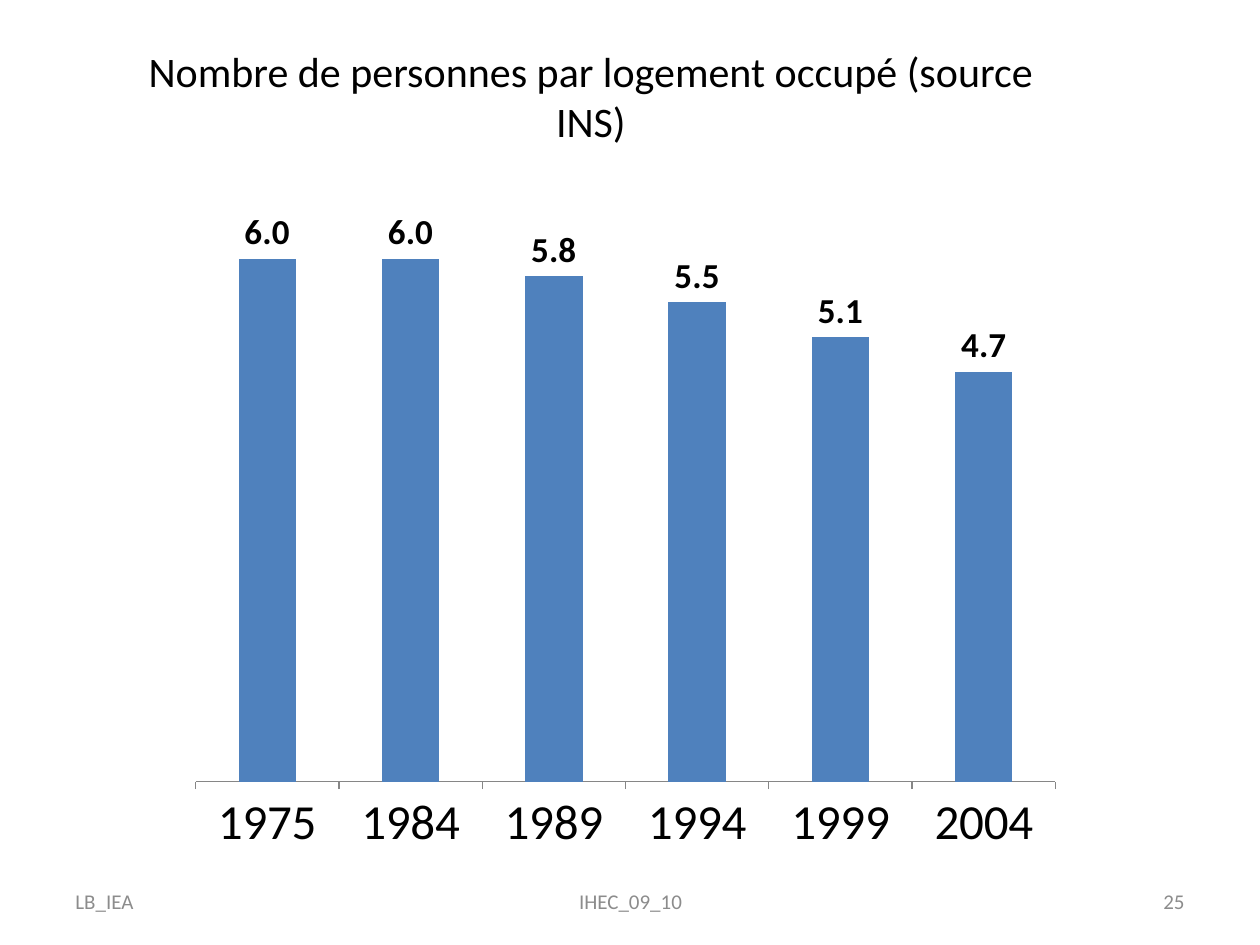
import pptx
import pptx.chart.data
import pptx.dml.color
import pptx.enum.chart
import pptx.enum.text
import pptx.oxml
import pptx.oxml.ns
import pptx.util

THEME = {
    "font": "Calibri",
    "ink": pptx.dml.color.RGBColor.from_string("000000"),
    "muted": pptx.dml.color.RGBColor.from_string("8C8C8C"),
    "bar": pptx.dml.color.RGBColor.from_string("4F81BD"),
    "axis": pptx.dml.color.RGBColor.from_string("868686"),
    "title": pptx.util.Pt(24),
    "footer": pptx.util.Pt(12),
    "years": pptx.util.Pt(28),
    "labels": pptx.util.Pt(20),
    "chart": pptx.util.Pt(10),
}
ALIGN = pptx.enum.text.PP_ALIGN
ANCHOR = pptx.enum.text.MSO_ANCHOR
TICK = pptx.enum.chart.XL_TICK_MARK

deck = pptx.Presentation()
deck.slide_width = pptx.util.Inches(10)
deck.slide_height = pptx.util.Inches(7.5)
page = deck.slides.add_slide(deck.slide_layouts[6])


def apply_format(target, values):
    for name, value in values.items():
        setattr(target, name, value)


def style_font(font, size, color, bold=False):
    apply_format(font, {"name": THEME["font"], "size": THEME[size], "bold": bold})
    font.color.rgb = THEME[color]


# Column chart: persons per occupied dwelling
persons = {"1975": 6.0, "1984": 6.0, "1989": 5.8, "1994": 5.5, "1999": 5.1, "2004": 4.7}
data = pptx.chart.data.CategoryChartData(number_format="0.0")
data.categories = list(persons)
data.add_series("Series 1", list(persons.values()))
chart_area = [pptx.util.Inches(length) for length in (1.41, 1.25, 7.11, 5.63)]
chart = page.shapes.add_chart(
    pptx.enum.chart.XL_CHART_TYPE.COLUMN_CLUSTERED, *chart_area, data).chart
apply_format(chart, {"has_legend": False, "has_title": False})
style_font(chart.font, "chart", "ink")

# Bars and their values
plot = chart.plots[0]
apply_format(plot, {"gap_width": 150, "vary_by_categories": False, "has_data_labels": True})
fill = plot.series[0].format.fill
fill.solid()
fill.fore_color.rgb = THEME["bar"]
apply_format(plot.data_labels, {
    "show_value": True, "number_format": "0.0", "number_format_is_linked": False,
    "position": pptx.enum.chart.XL_LABEL_POSITION.OUTSIDE_END})
style_font(plot.data_labels.font, "labels", "ink", bold=True)

# Axes
apply_format(chart.value_axis, {
    "visible": False, "has_major_gridlines": False,
    "minimum_scale": 0, "maximum_scale": 7})
year_axis = chart.category_axis
apply_format(year_axis, {"major_tick_mark": TICK.OUTSIDE, "minor_tick_mark": TICK.NONE})
style_font(year_axis.tick_labels.font, "years", "ink")
year_axis.format.line.color.rgb = THEME["axis"]
year_axis.format.line.width = pptx.util.Pt(0.75)

# Plot area as shares of the chart
plot_area = chart.element.find(".//" + pptx.oxml.ns.qn("c:plotArea"))
for old_layout in plot_area.findall(pptx.oxml.ns.qn("c:layout")):
    plot_area.remove(old_layout)
shares = {"x": 0.02, "y": 0.02, "w": 0.96, "h": 0.86}
plot_area.insert(0, pptx.oxml.parse_xml(
    f'<c:layout {pptx.oxml.ns.nsdecls("c")}><c:manualLayout>'
    '<c:layoutTarget val="inner"/><c:xMode val="edge"/><c:yMode val="edge"/>'
    + "".join(f'<c:{side} val="{share}"/>' for side, share in shares.items())
    + "</c:manualLayout></c:layout>"))

# Title and footer line
footer_top, footer_height = 6.95, 0.4
texts = [
    ("Nombre de personnes par logement occupé (source INS)",
     (1.02, 0.31, 7.34, 0.91), ALIGN.CENTER, ANCHOR.TOP, "title", "ink"),
]
for wording, left, width, align in [
    ("LB_IEA", 0.5, 2.33, ALIGN.LEFT),
    ("25", 7.17, 2.33, ALIGN.RIGHT),
    ("IHEC_09_10", 3.42, 3.17, ALIGN.CENTER),
]:
    texts.append((wording, (left, footer_top, width, footer_height),
                  align, ANCHOR.MIDDLE, "footer", "muted"))

for wording, area, align, anchor, size, color in texts:
    box = page.shapes.add_textbox(*[pptx.util.Inches(length) for length in area])
    apply_format(box.text_frame, {"word_wrap": True, "vertical_anchor": anchor})
    para = box.text_frame.paragraphs[0]
    para.alignment = align
    span = para.add_run()
    span.text = wording
    style_font(span.font, size, color)

deck.save("out.pptx")
